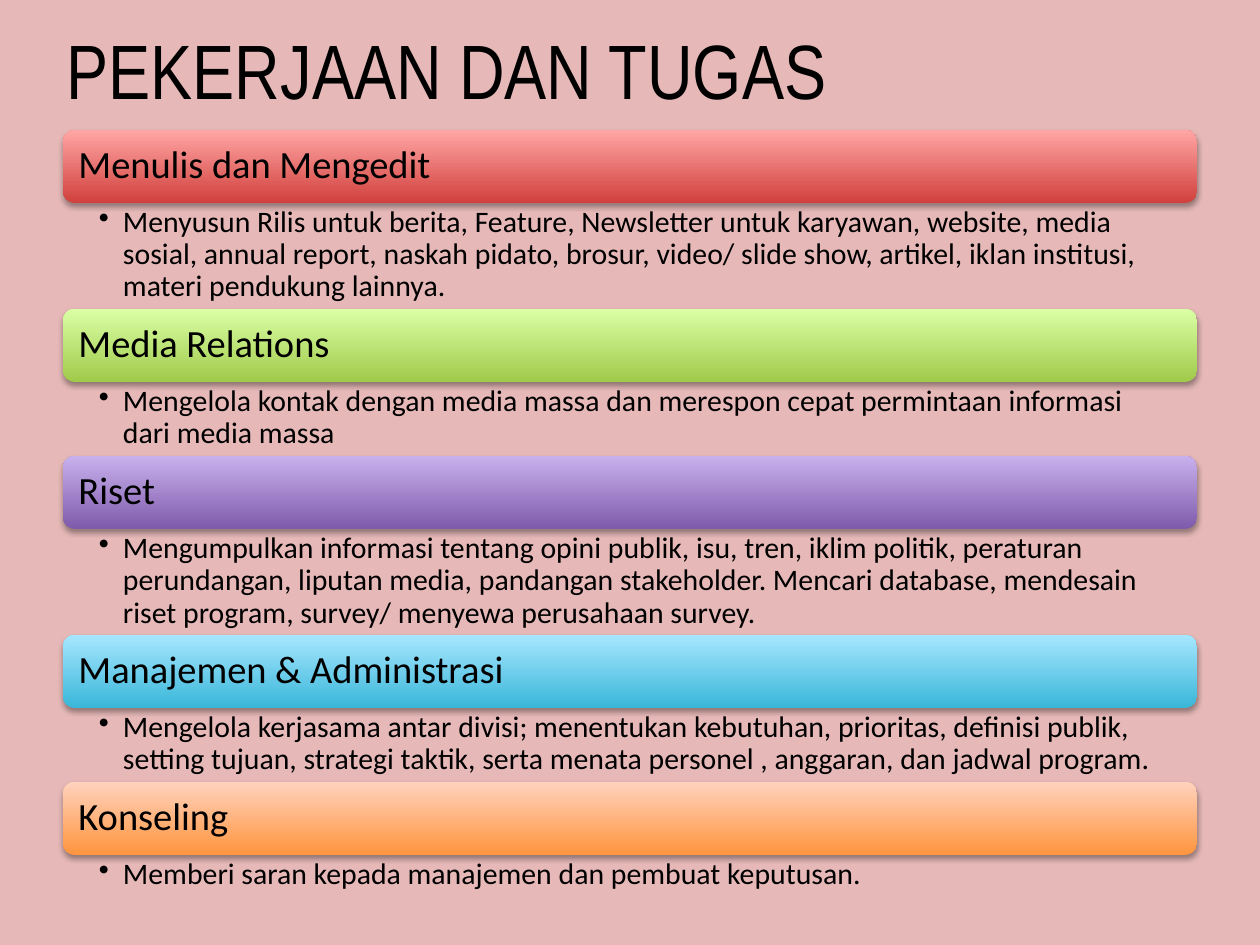
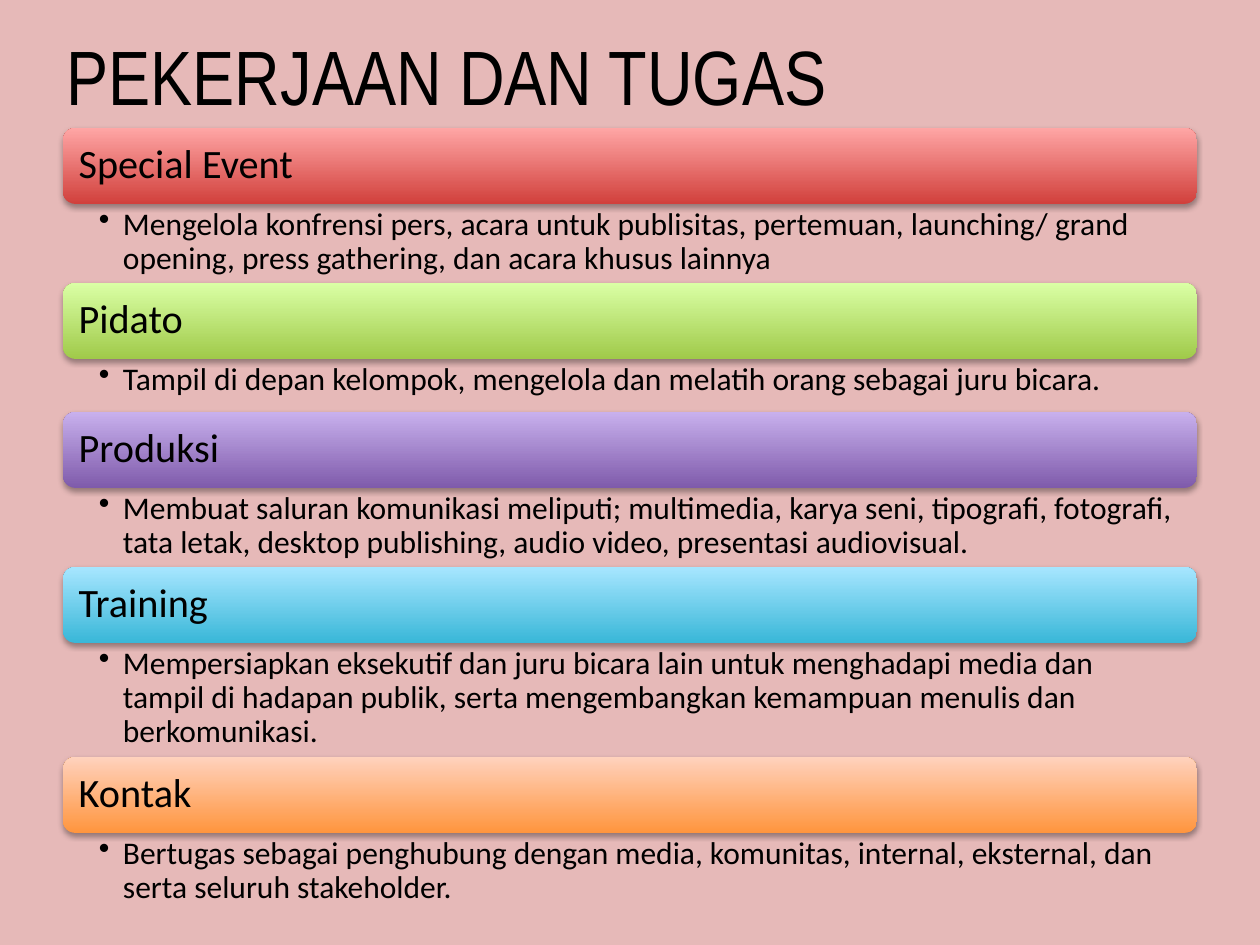
from dataclasses import dataclass

from lxml.etree import SubElement
from pptx import Presentation
from pptx.dml.color import RGBColor
from pptx.enum.shapes import MSO_SHAPE as Preset
from pptx.enum.text import MSO_ANCHOR as Anchor, PP_ALIGN as Align
from pptx.oxml.ns import qn
from pptx.util import Emu, Pt

PX_PER_INCH = 126
SLIDE_WIDTH, SLIDE_HEIGHT = 1260, 945
LEFT, WIDTH = 63, 1134
HANGING = 24

COLOURS = {"background": "E6B9B8", "text": "000000", "shadow": "000000"}
# Band gradients, from the bottom colour to the top colour
BAND_COLOURS = {
    "red": ("D1403C", "FFA6A5"),
    "green": ("A0CA4A", "DAFFA5"),
    "purple": ("7F5BAB", "C8B0ED"),
    "blue": ("39B7D8", "A7E6FF"),
    "orange": ("FF953E", "FFD2BD"),
}


def px(length: int) -> Emu:
    return Emu(round(length * 914400 / PX_PER_INCH))


def rgb(name: str) -> RGBColor:
    return RGBColor.from_string(COLOURS[name])


# Text frame formats
TITLE_FRAME = {"vertical_anchor": Anchor.MIDDLE, "word_wrap": True}
JOB_FRAME = {
    "margin_left": px(12), "margin_right": px(12),
    "margin_top": px(12), "margin_bottom": px(12),
    "vertical_anchor": Anchor.MIDDLE, "word_wrap": True,
}
DUTY_FRAME = {
    "margin_left": px(36), "margin_right": px(22),
    "margin_top": px(4), "margin_bottom": px(4),
    "vertical_anchor": Anchor.TOP, "word_wrap": True,
}

# Paragraph formats
TITLE_PARAGRAPH = {"alignment": Align.LEFT}
JOB_PARAGRAPH = {"alignment": Align.LEFT, "line_spacing": 0.9}
DUTY_PARAGRAPH = {**JOB_PARAGRAPH, "level": 1}


@dataclass
class Job:
    name: str
    duty: str
    lines: int


@dataclass
class JobPage:
    title_top: int
    list_top: int
    band_height: int
    duty_heights: dict[int, int]  # height by number of text lines
    job_size: int
    duty_size: int
    jobs: list[Job]


TITLE = "PEKERJAAN DAN TUGAS"
PAGES = [
    JobPage(-10, 130, 73, {1: 50, 2: 74, 3: 106}, 22, 17, [
        Job("Menulis dan Mengedit",
            "Menyusun Rilis untuk berita, Feature, Newsletter untuk karyawan, "
            "website, media sosial, annual report, naskah pidato, brosur, video/ "
            "slide show, artikel, iklan institusi, materi pendukung lainnya.", 3),
        Job("Media Relations",
            "Mengelola kontak dengan media massa dan merespon cepat permintaan "
            "informasi dari media massa", 2),
        Job("Riset",
            "Mengumpulkan informasi tentang opini publik, isu, tren, iklim politik, "
            "peraturan perundangan, liputan media, pandangan stakeholder. Mencari "
            "database, mendesain riset program, survey/ menyewa perusahaan survey.", 3),
        Job("Manajemen & Administrasi",
            "Mengelola kerjasama antar divisi; menentukan kebutuhan, prioritas, "
            "definisi publik, setting tujuan, strategi taktik, serta menata "
            "personel , anggaran, dan jadwal program.", 2),
        Job("Konseling",
            "Memberi saran kepada manajemen dan pembuat keputusan.", 1),
    ]),
    JobPage(-4, 128, 76, {1: 53, 2: 79, 3: 114}, 23, 18, [
        Job("Special Event",
            "Mengelola konfrensi pers, acara untuk publisitas, pertemuan, launching/ "
            "grand opening, press gathering, dan acara khusus lainnya", 2),
        Job("Pidato",
            "Tampil di depan kelompok, mengelola dan melatih orang sebagai juru "
            "bicara.", 1),
        Job("Produksi",
            "Membuat saluran komunikasi meliputi; multimedia, karya seni, tipografi, "
            "fotografi, tata letak, desktop publishing, audio video, presentasi "
            "audiovisual.", 2),
        Job("Training",
            "Mempersiapkan eksekutif dan juru bicara lain untuk menghadapi media dan "
            "tampil di hadapan publik, serta mengembangkan kemampuan menulis dan "
            "berkomunikasi.", 3),
        Job("Kontak",
            "Bertugas sebagai penghubung dengan media, komunitas, internal, "
            "eksternal, dan serta seluruh stakeholder.", 2),
    ]),
]


def apply_format(target, values: dict) -> None:
    for attribute, value in values.items():
        setattr(target, attribute, value)


def add_bullet(paragraph) -> None:
    properties = paragraph._p.get_or_add_pPr()
    properties.set("marL", str(px(HANGING)))
    properties.set("indent", str(-px(HANGING)))
    SubElement(properties, qn("a:buChar"), char="•")


def write(shape, text: str, frame_format: dict, paragraph_format: dict,
          size: int, font: str = "Calibri", bullet: bool = False) -> None:
    frame = shape.text_frame
    apply_format(frame, frame_format)
    paragraph = frame.paragraphs[0]
    run = paragraph.add_run()
    run.text = text
    apply_format(paragraph, paragraph_format)
    if bullet:
        add_bullet(paragraph)
    apply_format(run.font, {"name": font, "size": Pt(size)})
    run.font.color.rgb = rgb("text")


def add_shadow(shape) -> None:
    shape.shadow.inherit = False
    effects = shape._element.spPr.find(qn("a:effectLst"))
    shadow = SubElement(effects, qn("a:outerShdw"), blurRad=str(Pt(3.1)),
                        dist=str(Pt(1.8)), dir="5400000", rotWithShape="0")
    colour = SubElement(shadow, qn("a:srgbClr"), val=COLOURS["shadow"])
    SubElement(colour, qn("a:alpha"), val="35000")


def add_band(slide, top: int, height: int, gradient: tuple[str, str]):
    band = slide.shapes.add_shape(Preset.ROUNDED_RECTANGLE,
                                  px(LEFT), px(top), px(WIDTH), px(height))
    band.fill.gradient()
    band.fill.gradient_angle = 90
    for stop, colour in zip(band.fill.gradient_stops, gradient):
        stop.color.rgb = RGBColor.from_string(colour)
    band.line.fill.background()
    add_shadow(band)
    return band


def add_page(presentation, page: JobPage) -> None:
    slide = presentation.slides.add_slide(presentation.slide_layouts[5])

    # Title
    title = slide.shapes.title
    apply_format(title, {"left": px(54), "top": px(page.title_top),
                         "width": px(WIDTH), "height": px(157)})
    write(title, TITLE, TITLE_FRAME, TITLE_PARAGRAPH, 44, "Arial Narrow")

    # Each job band with its duty below
    top = page.list_top
    for job, gradient in zip(page.jobs, BAND_COLOURS.values()):
        band = add_band(slide, top, page.band_height, gradient)
        write(band, job.name, JOB_FRAME, JOB_PARAGRAPH, page.job_size)
        top += page.band_height

        duty_height = page.duty_heights[job.lines]
        duty = slide.shapes.add_textbox(px(LEFT), px(top), px(WIDTH), px(duty_height))
        write(duty, job.duty, DUTY_FRAME, DUTY_PARAGRAPH, page.duty_size, bullet=True)
        top += duty_height


def main() -> None:
    presentation = Presentation()
    presentation.slide_width = px(SLIDE_WIDTH)
    presentation.slide_height = px(SLIDE_HEIGHT)

    # Shared background
    backdrop = presentation.slide_master.background.fill
    backdrop.solid()
    backdrop.fore_color.rgb = rgb("background")

    for page in PAGES:
        add_page(presentation, page)
    presentation.save("out.pptx")


if __name__ == "__main__":
    main()
